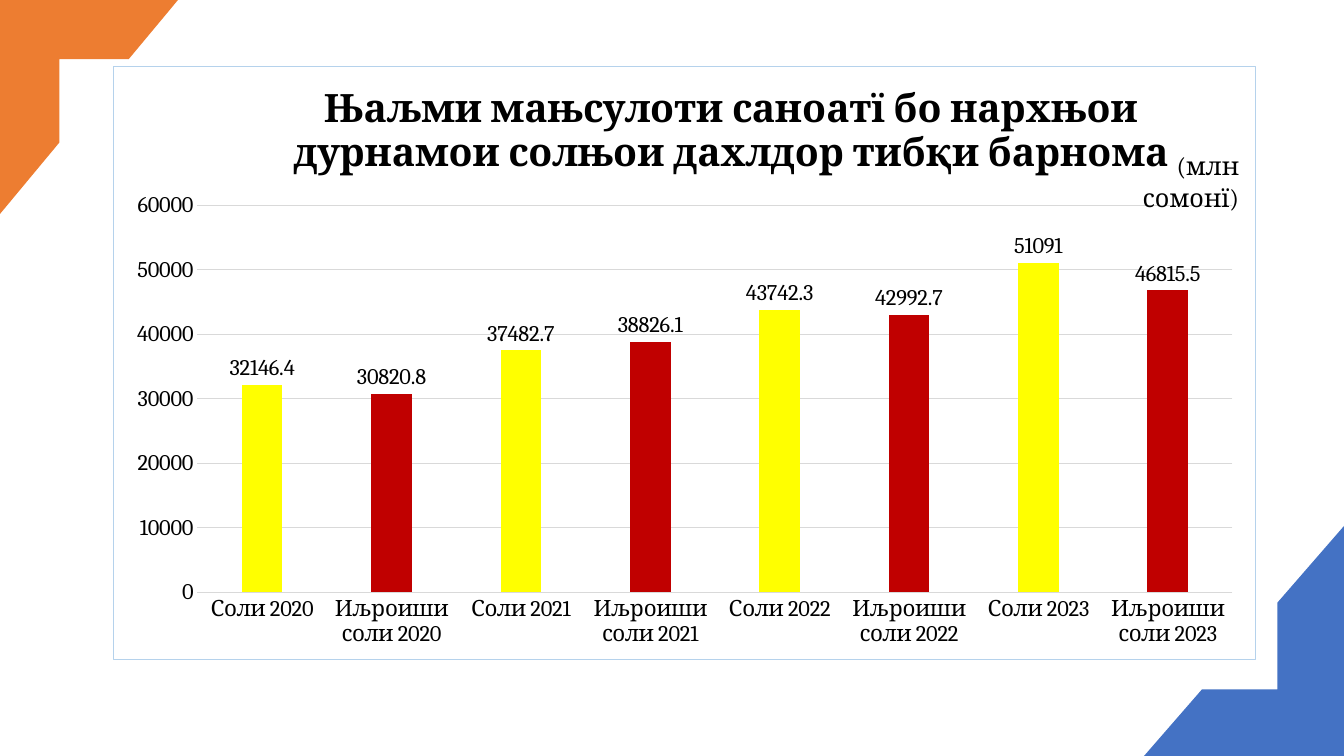
from pptx import Presentation
from pptx.chart.data import CategoryChartData
from pptx.dml.color import RGBColor
from pptx.enum.chart import XL_CHART_TYPE as Kind, XL_LABEL_POSITION as Spot
from pptx.enum.chart import XL_TICK_MARK as Tick
from pptx.enum.shapes import MSO_SHAPE as Preset
from pptx.enum.text import PP_ALIGN as Align
from pptx.oxml import parse_xml
from pptx.oxml.ns import nsdecls, qn
from pptx.util import Pt

# Content
TITLE = ["Њаљми мањсулоти саноатї бо нархњои",
         "дурнамои солњои дахлдор тибқи барнома"]
UNIT = "(млн сомонї)"
# year, planned, achieved
DATA = [(2020, 32146.4, 30820.8), (2021, 37482.7, 38826.1),
        (2022, 43742.3, 42992.7), (2023, 51091, 46815.5)]

# Style
FONT = "Cambria"
BLACK = RGBColor(0, 0, 0)
GRAY = RGBColor(0xD9, 0xD9, 0xD9)
YELLOW = RGBColor(0xFF, 0xFF, 0)
RED = RGBColor(0xC0, 0, 0)
BLUE = RGBColor(0x44, 0x72, 0xC4)
ORANGE = RGBColor(0xED, 0x7D, 0x31)
BORDER = RGBColor(0xB5, 0xD2, 0xEC)

# Places in px: left, top, width, height
WIDE, HIGH = 1344, 756
CHART = (113, 66, 1143, 594)
PLOT = (197, 205, 1036, 388)
HEAD = (290, 82)
NOTE = (1076, 143, 173, 43)
CORNERS = [((1144, 526, 200, 230), 180, BLUE), ((0, 0, 178, 214), 0, ORANGE)]


def px(n):
    return n * 9525 * 20 // 21  # 100.8 px to the inch


def box(place):
    return [px(n) for n in place]


def style(font, size, bold=False):
    font.name, font.size, font.bold = FONT, Pt(size), bold
    font.color.rgb = BLACK


def lay_out(part, index, place, inner=False):
    """Fix a chart part at a place given in slide px."""
    for old in part.findall(qn("c:layout")):
        part.remove(old)
    left, top, wide, high = CHART
    share = [(place[0] - left) / wide, (place[1] - top) / high]
    share += [n / full for n, full in zip(place[2:], (wide, high))]
    tags = '<c:layoutTarget val="inner"/>' if inner else ""
    tags += '<c:xMode val="edge"/><c:yMode val="edge"/>'
    tags += "".join(f'<c:{k} val="{n:.4f}"/>' for k, n in zip("xywh", share))
    part.insert(index, parse_xml(
        f'<c:layout {nsdecls("c")}><c:manualLayout>{tags}'
        '</c:manualLayout></c:layout>'))


deck = Presentation()
deck.slide_width, deck.slide_height = px(WIDE), px(HIGH)
slide = deck.slides.add_slide(deck.slide_layouts[6])
shapes = slide.shapes

# Chart
data = CategoryChartData()
data.categories = [name for year, *_ in DATA
                   for name in (f"Соли {year}", f"Иљроиши соли {year}")]
data.add_series("Series 1", [n for _, *pair in DATA for n in pair])
chart = shapes.add_chart(Kind.COLUMN_CLUSTERED, *box(CHART), data).chart
chart.has_legend = False
style(chart.font, 16)
space = chart._chartSpace
space.find(qn("c:chart")).addnext(parse_xml(
    f'<c:spPr {nsdecls("c", "a")}><a:noFill/><a:ln w="9525"><a:solidFill>'
    f'<a:srgbClr val="{BORDER}"/></a:solidFill></a:ln></c:spPr>'))

# Chart title
title = chart.chart_title
frame = title.text_frame
frame.text = "\n".join(TITLE)
for line in frame.paragraphs:
    line.alignment = Align.CENTER
    for run in line.runs:
        style(run.font, 28, True)
lay_out(title._element, 1, HEAD)
lay_out(space.find(".//" + qn("c:plotArea")), 0, PLOT, True)

# Axes
cats, vals = chart.category_axis, chart.value_axis
for axis in (cats, vals):
    axis.major_tick_mark = axis.minor_tick_mark = Tick.NONE
    style(axis.tick_labels.font, 16)
vals.minimum_scale, vals.maximum_scale, vals.major_unit = 0, 60000, 10000
vals.format.line.fill.background()
for line in (cats.format.line, vals.major_gridlines.format.line):
    line.color.rgb, line.width = GRAY, Pt(0.75)

# Columns
plot = chart.plots[0]
plot.gap_width, plot.overlap, plot.vary_by_categories = 219, -27, False
bars = plot.series[0]
for i in range(2 * len(DATA)):
    fill = bars.points[i].format.fill
    fill.solid()
    fill.fore_color.rgb = (YELLOW, RED)[i % 2]
labels = bars.data_labels
labels.show_value, labels.position = True, Spot.OUTSIDE_END
style(labels.font, 16)

# Unit note
frame = shapes.add_textbox(*box(NOTE)).text_frame
frame.word_wrap = True
note = frame.paragraphs[0]
note.text = UNIT
note.alignment, note.line_spacing = Align.RIGHT, 1.07
style(note.runs[0].font, 18)

# Corner frames
for place, turn, color in CORNERS:
    corner = shapes.add_shape(Preset.HALF_FRAME, *box(place))
    corner.rotation = turn
    corner.shadow.inherit = False
    corner.fill.solid()
    corner.fill.fore_color.rgb = color
    corner.line.fill.background()

deck.save("out.pptx")
